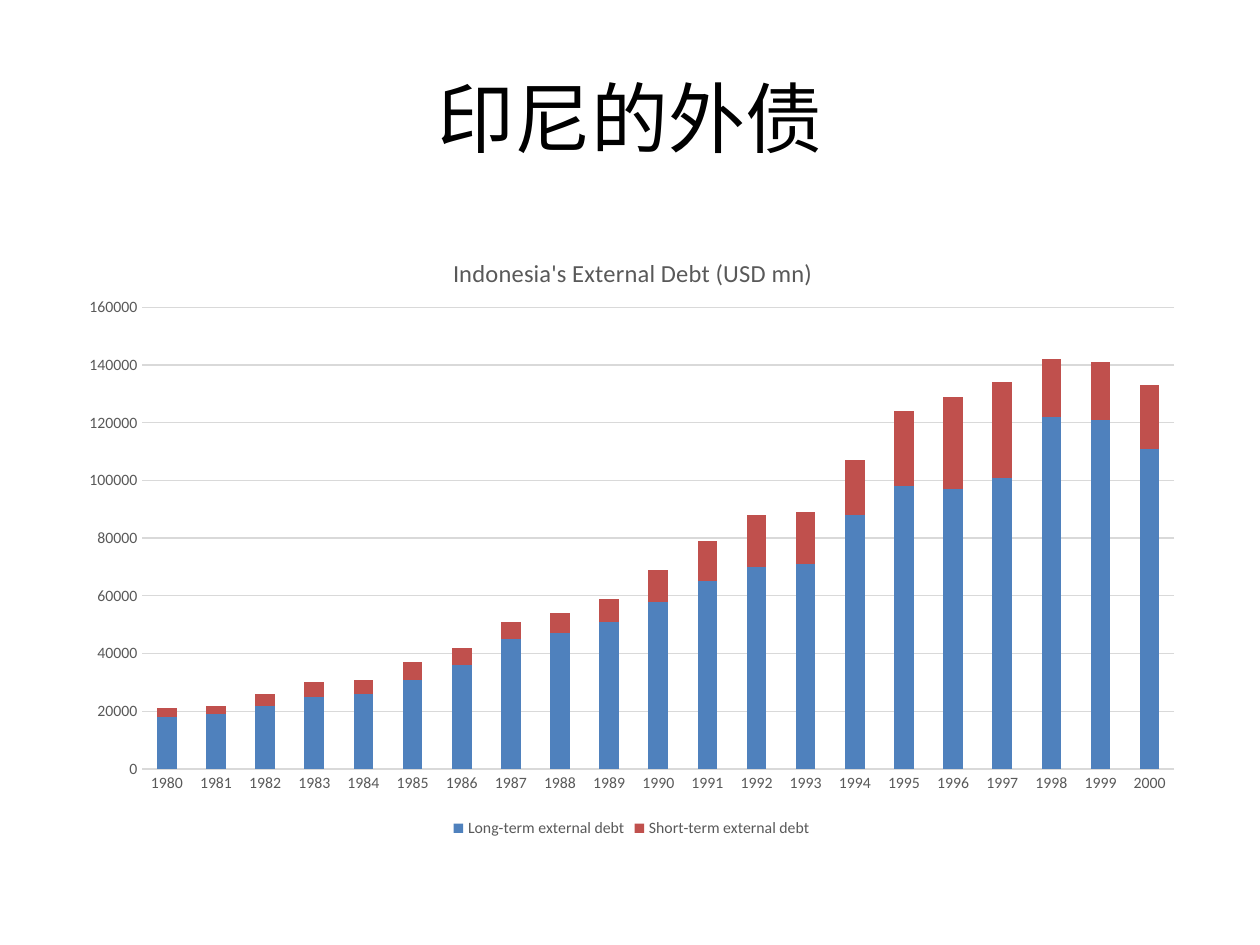
from pptx import Presentation
from pptx.chart.data import CategoryChartData
from pptx.dml.color import RGBColor
from pptx.enum.chart import XL_CHART_TYPE, XL_LEGEND_POSITION, XL_TICK_MARK
from pptx.enum.text import MSO_ANCHOR, PP_ALIGN
from pptx.oxml import parse_xml
from pptx.oxml.ns import nsdecls
from pptx.util import Pt

HUES = {"ink": "000000", "gray": "595959", "grid": "D9D9D9",
        "long": "4F81BD", "short": "C0504D"}
FACE = "Calibri"
SCALE = 914400 / 126

YEARS = [str(year) for year in range(1980, 2001)]
LONG = [18000, 19000, 22000, 25000, 26000, 31000, 36000, 45000, 47000,
        51000, 58000, 65000, 70000, 71000, 88000, 98000, 97000, 101000,
        122000, 121000, 111000]
SHORT = [3000, 3000, 4000, 5000, 5000, 6000, 6000, 6000, 7000, 8000, 11000,
         14000, 18000, 18000, 19000, 26000, 32000, 33000, 20000, 20000, 22000]
DEBTS = [("Long-term external debt", LONG, "long"),
         ("Short-term external debt", SHORT, "short")]


def emu(*lengths):
    return [round(length * SCALE) for length in lengths]


def color(hue):
    return RGBColor.from_string(HUES[hue])


class Deck:
    def __init__(self):
        self.show = Presentation()
        self.show.slide_width, self.show.slide_height = emu(1260, 945)
        self.slide = self.show.slides.add_slide(self.show.slide_layouts[5])

    def font(self, font, size, hue):
        font.name, font.size, font.bold = FACE, Pt(size), False
        font.color.rgb = color(hue)

    def line(self, line, hue):
        line.color.rgb = color(hue)
        line.width = Pt(0.75)

    def title(self, text, box):
        shape = self.slide.shapes.title
        shape.left, shape.top, shape.width, shape.height = emu(*box)
        frame = shape.text_frame
        frame.text = text
        frame.vertical_anchor = MSO_ANCHOR.MIDDLE
        par = frame.paragraphs[0]
        par.alignment = PP_ALIGN.CENTER
        self.font(par.font, 44, "ink")

    def place(self, chart, tag, index, **parts):
        node = chart.element.xpath(f".//c:{tag}")[0]
        for old in node.xpath("./c:layout"):
            node.remove(old)
        inner = '<c:layoutTarget val="inner"/>' if "w" in parts else ""
        modes = "".join(f'<c:{key}Mode val="edge"/>' for key in "xy")
        sizes = "".join(f'<c:{key} val="{val}"/>' for key, val in parts.items())
        node.insert(index, parse_xml(
            f'<c:layout {nsdecls("c")}><c:manualLayout>'
            f'{inner}{modes}{sizes}</c:manualLayout></c:layout>'))

    def chart(self, text, cats, rows, box):
        data = CategoryChartData()
        data.categories = cats
        for name, vals, hue in rows:
            data.add_series(name, vals)
        chart = self.slide.shapes.add_chart(
            XL_CHART_TYPE.COLUMN_STACKED, *emu(*box), data).chart
        self.font(chart.font, 10, "ink")

        chart.has_title = True
        frame = chart.chart_title.text_frame
        frame.text = text
        self.font(frame.paragraphs[0].font, 14, "gray")
        chart.chart_title.include_in_layout = False

        plot = chart.plots[0]
        plot.gap_width, plot.overlap = 150, 100
        plot.vary_by_categories = False
        for series, (name, vals, hue) in zip(plot.series, rows):
            series.format.fill.solid()
            series.format.fill.fore_color.rgb = color(hue)

        for axis in (chart.category_axis, chart.value_axis):
            axis.major_tick_mark = axis.minor_tick_mark = XL_TICK_MARK.NONE
            self.font(axis.tick_labels.font, 9, "gray")
        self.line(chart.category_axis.format.line, "grid")
        scale = chart.value_axis
        scale.format.line.fill.background()
        scale.minimum_scale, scale.maximum_scale = 0, 160000
        scale.major_unit = 20000
        self.line(scale.major_gridlines.format.line, "grid")

        chart.has_legend = True
        chart.legend.position = XL_LEGEND_POSITION.BOTTOM
        chart.legend.include_in_layout = False
        self.font(chart.legend.font, 9, "gray")

        self.place(chart, "title", 1, x=0.34, y=0.05)
        self.place(chart, "plotArea", 0, x=0.07, y=0.14, w=0.91, h=0.74)
        self.place(chart, "legend", 1, x=0.34, y=0.96)

    def save(self):
        self.show.save("out.pptx")


def main():
    deck = Deck()
    deck.title("印尼的外债", (63, 38, 1134, 158))
    deck.chart("Indonesia's External Debt (USD mn)", YEARS, DEBTS,
               (63, 220, 1134, 624))
    deck.save()


if __name__ == "__main__":
    main()
